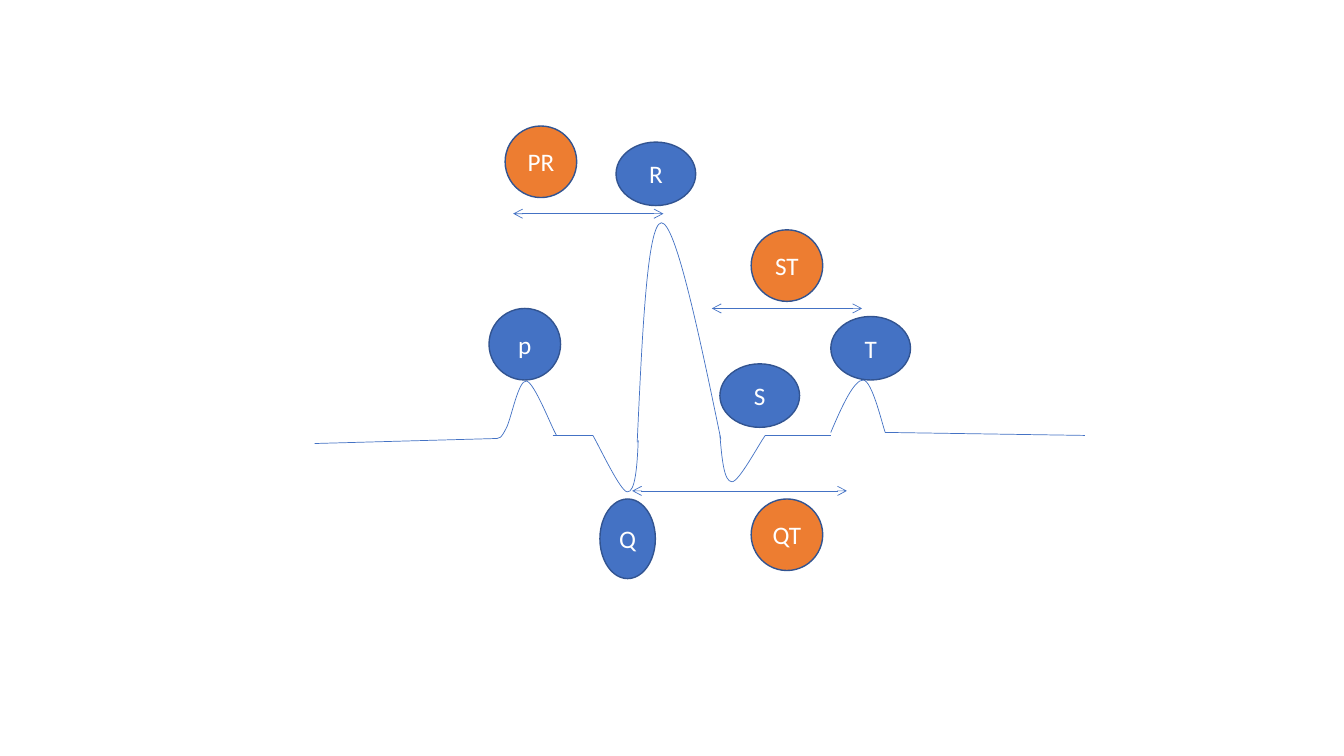
from dataclasses import dataclass

from lxml import etree
from pptx import Presentation
from pptx import util as u
from pptx.dml.color import RGBColor
from pptx.enum import shapes, text
from pptx.oxml.ns import qn

# Slide grid: square cells, addressed by column and row
COLUMNS, ROWS = 1333, 750
CELL = u.Inches(0.01)

Point = tuple[int, int]


@dataclass(frozen=True)
class Theme:
    blue: str = "4472C4"
    orange: str = "ED7D31"
    outline: str = "325491"
    label: str = "FFFFFF"
    font: str = "Calibri"
    label_size: float = 18
    trace_width: float = 0.5
    outline_width: float = 1


THEME = Theme()


@dataclass(frozen=True)
class Wave:
    """A start point, then two control points and an end point per curve."""
    start: Point
    curves: list[Point]


@dataclass(frozen=True)
class Segment:
    start: Point
    end: Point
    arrows: bool = False


@dataclass(frozen=True)
class Badge:
    label: str
    corner: Point
    size: Point
    fill: str = THEME.blue


CIRCLE, WIDE, TALL = (71, 71), (79, 63), (55, 79)
BASELINE = 432

WAVES = [
    # P
    Wave((493, 435), [(495, 435), (497, 435), (502, 425),
                      (507, 416), (514, 377), (522, 378),
                      (530, 379), (547, 424), (552, BASELINE)]),
    # S
    Wave((714, BASELINE), [(716, 455), (718, 478), (726, 478),
                           (733, 478), (753, 440), (759, BASELINE)]),
    # T
    Wave((824, 429), [(835, 403), (847, 377), (856, 377),
                      (865, 377), (875, 421), (878, 429)]),
    # Q
    Wave((633, 437), [(632, 463), (630, 489), (622, 488),
                      (615, 487), (594, 442), (588, BASELINE)]),
    # R
    Wave((632, 439), [(637, 331), (642, 222), (656, 221),
                      (670, 221), (693, 329), (715, 436)]),
]

SEGMENTS = [
    # Resting line between the waves
    Segment((548, BASELINE), (588, BASELINE)),
    Segment((759, BASELINE), (824, BASELINE)),
    Segment((493, 435), (312, 440)),
    Segment((878, 429), (1076, BASELINE)),
    # Intervals PR, QT and ST
    Segment((509, 212), (658, 212), arrows=True),
    Segment((627, 487), (840, 487), arrows=True),
    Segment((706, 306), (855, 306), arrows=True),
]

BADGES = [
    Badge("p", (485, 306), CIRCLE),
    Badge("Q", (595, 495), TALL),
    Badge("R", (611, 141), WIDE),
    Badge("S", (714, 361), WIDE),
    Badge("T", (824, 314), WIDE),
    Badge("PR", (501, 125), CIRCLE, THEME.orange),
    Badge("QT", (745, 495), CIRCLE, THEME.orange),
    Badge("ST", (745, 228), CIRCLE, THEME.orange),
]


def cells(*counts: int) -> list[int]:
    return [count * CELL for count in counts]


def set_line(line, color: str, width: float) -> None:
    line.color.rgb = RGBColor.from_string(color)
    line.width = u.Pt(width)


def write_text(frame, words: str, *, size: float, color: str, font: str) -> None:
    frame.margin_left = frame.margin_right = 0
    frame.vertical_anchor = text.MSO_ANCHOR.MIDDLE
    paragraph = frame.paragraphs[0]
    paragraph.alignment = text.PP_ALIGN.CENTER
    run = paragraph.add_run()
    run.text = words
    run.font.size = u.Pt(size)
    run.font.name = font
    run.font.color.rgb = RGBColor.from_string(color)


def draw_wave(slide, wave: Wave) -> None:
    builder = slide.shapes.build_freeform(*wave.start, scale=CELL)
    builder.add_line_segments(wave.curves, close=False)
    trace = builder.convert_to_shape()
    trace.shadow.inherit = False
    trace.fill.background()
    set_line(trace.line, THEME.blue, THEME.trace_width)
    # Turn each three straight steps into one Bezier curve
    steps = list(trace.element.iter(qn("a:lnTo")))
    for first in range(0, len(steps), 3):
        curve = etree.Element(qn("a:cubicBezTo"))
        steps[first].addprevious(curve)
        for step in steps[first:first + 3]:
            curve.append(step[0])
            step.getparent().remove(step)


def draw_segment(slide, segment: Segment) -> None:
    connector = slide.shapes.add_connector(
        shapes.MSO_CONNECTOR.STRAIGHT, *cells(*segment.start, *segment.end))
    set_line(connector.line, THEME.blue, THEME.trace_width)
    properties = connector.element.spPr
    if segment.arrows:
        for end in ("a:headEnd", "a:tailEnd"):
            etree.SubElement(properties.find(qn("a:ln")), qn(end), type="arrow")
    etree.SubElement(properties, qn("a:effectLst"))


def draw_badge(slide, badge: Badge) -> None:
    oval = slide.shapes.add_shape(
        shapes.MSO_SHAPE.OVAL, *cells(*badge.corner, *badge.size))
    oval.shadow.inherit = False
    oval.fill.solid()
    oval.fill.fore_color.rgb = RGBColor.from_string(badge.fill)
    set_line(oval.line, THEME.outline, THEME.outline_width)
    write_text(oval.text_frame, badge.label, size=THEME.label_size,
               color=THEME.label, font=THEME.font)


def main() -> None:
    deck = Presentation()
    deck.slide_width, deck.slide_height = cells(COLUMNS, ROWS)
    slide = deck.slides.add_slide(deck.slide_layouts[6])
    for wave in WAVES:
        draw_wave(slide, wave)
    for segment in SEGMENTS:
        draw_segment(slide, segment)
    for badge in BADGES:
        draw_badge(slide, badge)
    deck.save("out.pptx")


if __name__ == "__main__":
    main()
